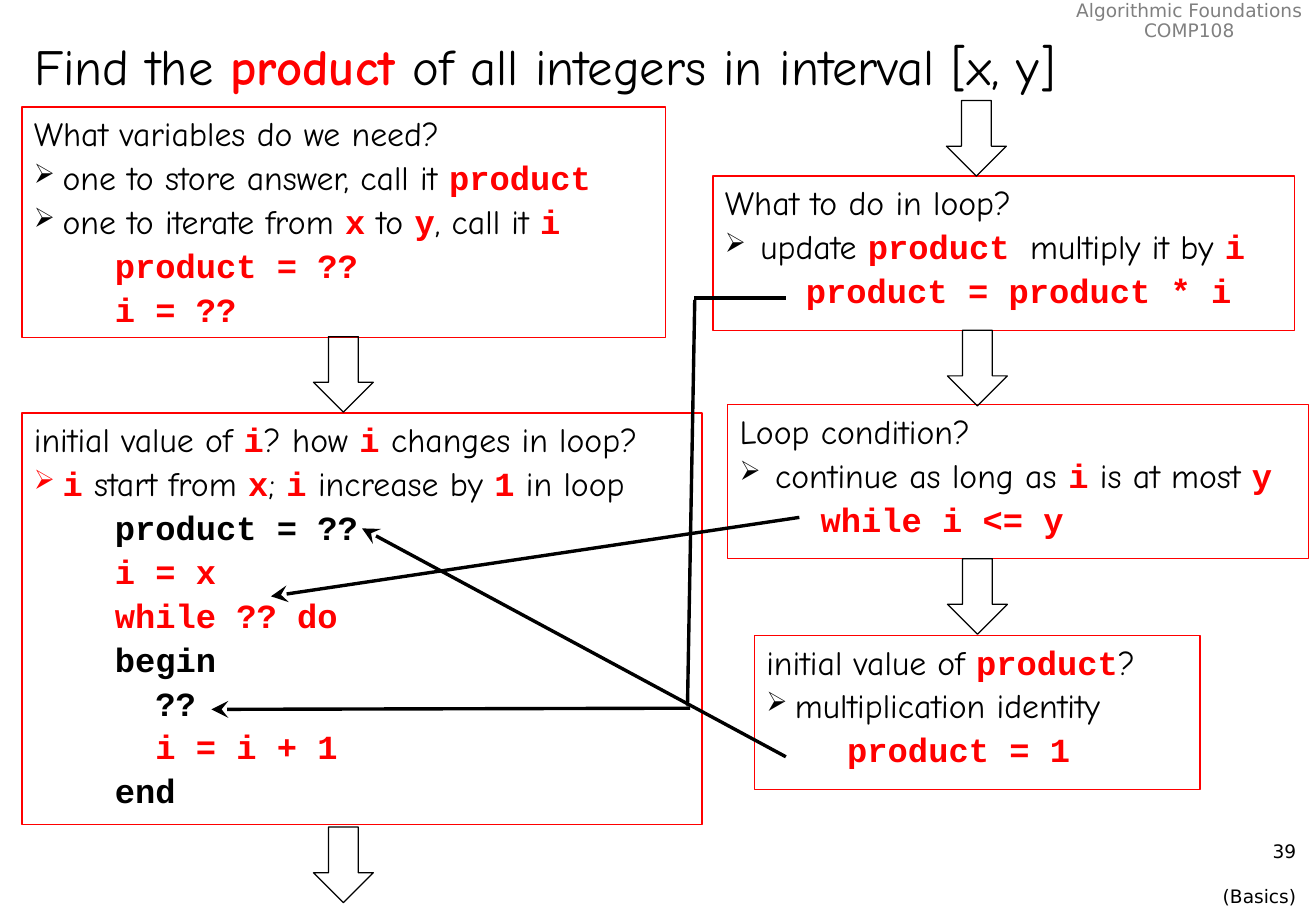
"""Build the slide on deriving a loop that multiplies all integers in an interval."""
from dataclasses import dataclass

from lxml.etree import SubElement
from pptx import Presentation
from pptx.dml.color import RGBColor as RGB
from pptx.enum.shapes import MSO_CONNECTOR as LINE, MSO_SHAPE as SHAPE
from pptx.enum.text import MSO_ANCHOR as ANCHOR, MSO_AUTO_SIZE as AUTO, PP_ALIGN as ALIGN
from pptx.oxml.ns import qn
from pptx.util import Pt


@dataclass(frozen=True)
class Theme:
    black: RGB = RGB(0, 0, 0)
    red: RGB = RGB(255, 0, 0)
    gray: RGB = RGB(128, 128, 128)
    hand: str = "Comic Neue"
    mono: str = "Courier New"
    sans: str = "DejaVu Sans"
    title: int = 30
    body: int = 20
    small: int = 11
    outline: float = 0.75
    link: int = 2


T = Theme()
STYLES = {
    "say": (T.hand, T.body, T.black, False),
    "code": (T.mono, T.body, T.red, True),
    "kept": (T.mono, T.body, T.black, True),
    "title": (T.hand, T.title, T.black, False),
    "key": (T.hand, T.title, T.red, True),
    "header": (T.sans, T.small, T.gray, False),
    "footer": (T.sans, T.small, T.black, False),
}
CODE_INDENT = 48
NEST_INDENT = 72

TITLE = [("title", "Find the "), ("key", "product"),
         ("title", " of all integers in interval [x, y]")]
HEADER = ["Algorithmic Foundations", "COMP108"]
FOOTER = ["39", "(Basics)"]

BOXES = [
    ((13, 63.4, 381.6, 136.8), 17, [
        ("head", [("say", "What variables do we need?")]),
        ("bullet", [("say", "one to store answer, call it "), ("code", "product")]),
        ("bullet", [("say", "one to iterate from "), ("code", "x"), ("say", " to "),
                    ("code", "y"), ("say", ", call it "), ("code", "i")]),
        ("line", [("code", "product = ??")]),
        ("line", [("code", "i = ??")]),
    ]),
    ((13, 244.8, 403.2, 244), 17, [
        ("head", [("say", "initial value of "), ("code", "i"), ("say", "? how "),
                  ("code", "i"), ("say", " changes in loop?")]),
        ("bullet", [("code", "i"), ("say", " start from "), ("code", "x"), ("say", "; "),
                    ("code", "i"), ("say", " increase by "), ("code", "1"),
                    ("say", " in loop")]),
        ("line", [("kept", "product = ??")]),
        ("line", [("code", "i = x")]),
        ("line", [("code", "while ?? do")]),
        ("line", [("kept", "begin")]),
        ("nested", [("kept", "??")]),
        ("nested", [("code", "i = i + 1")]),
        ("line", [("kept", "end")]),
    ]),
    ((422.6, 104.4, 344.9, 91.4), 21, [
        ("head", [("say", "What to do in loop?")]),
        ("bullet", [("say", "update "), ("code", "product "), ("say", "multiply it by "),
                    ("code", "i")]),
        ("line", [("code", "product = product * i")]),
    ]),
    ((431.3, 239.8, 344.2, 91.4), 21, [
        ("head", [("say", "Loop condition?")]),
        ("bullet", [("say", "continue as long as "), ("code", "i"),
                    ("say", " is at most "), ("code", "y")]),
        ("line", [("code", "while i <= y")]),
    ]),
    ((447.1, 376.6, 264.2, 91.4), 17, [
        ("head", [("say", "initial value of "), ("code", "product"), ("say", "?")]),
        ("bullet", [("say", "multiplication identity")]),
        ("line", [("code", "product = 1")]),
    ]),
]

ARROW_SIZE = (35.5, 44.8)
ARROWS = [(185.8, 199.6), (185.8, 490.3), (561, 59.6), (561.6, 195.8), (561.6, 331.2)]
LINKS = [
    ((465.8, 176.6), (411.1, 176.6), False),
    ((411.8, 177.8), (407.5, 418.3), False),
    ((409, 419.8), (125.3, 420.5), True),
    ((473.8, 306.7), (160.6, 353.5), True),
    ((465.8, 448.6), (214.6, 313.2), True),
]


def pts(*values):
    return [Pt(v) for v in values]


def add_runs(p, runs):
    for style, text in runs:
        r = p.add_run()
        r.text = text
        r.font.name, size, color, r.font.bold = STYLES[style]
        r.font.size = Pt(size)
        r.font.color.rgb = color


def add_paragraph(tf, index):
    return tf.add_paragraph() if index else tf.paragraphs[0]


def add_shape(s, kind, frame, color):
    sp = s.shapes.add_shape(kind, *pts(*frame))
    sp.shadow.inherit = False
    sp.fill.background()
    sp.line.color.rgb = color
    sp.line.width = Pt(T.outline)
    return sp


def add_box(s, frame, hang, lines):
    tf = add_shape(s, SHAPE.RECTANGLE, frame, T.red).text_frame
    tf.word_wrap = True
    tf.vertical_anchor = ANCHOR.TOP
    margins = {"head": 0, "bullet": hang, "line": CODE_INDENT, "nested": NEST_INDENT}
    for i, (kind, runs) in enumerate(lines):
        p = add_paragraph(tf, i)
        p.alignment = ALIGN.LEFT
        pPr = p._p.get_or_add_pPr()
        pPr.set("marL", str(Pt(margins[kind])))
        pPr.set("indent", str(Pt(-hang if kind == "bullet" else 0)))
        before = SubElement(pPr, qn("a:spcBef"))
        SubElement(before, qn("a:spcPct"), val="10000")
        if kind == "bullet":
            SubElement(pPr, qn("a:buSzPct"), val="80000")
            SubElement(pPr, qn("a:buChar"), char="➢")
        add_runs(p, runs)


def add_label(s, frame, lines, style, align, wrap, leading, gap):
    tf = s.shapes.add_textbox(*pts(*frame)).text_frame
    tf.word_wrap = wrap
    for i, text in enumerate(lines):
        p = add_paragraph(tf, i)
        p.alignment = align
        p.line_spacing = leading
        p.space_before = Pt(gap if i else 0)
        add_runs(p, [(style, text)])


def add_link(s, start, end, pointed):
    c = s.shapes.add_connector(LINE.STRAIGHT, *pts(*start, *end))
    c.line.color.rgb = T.black
    c.line.width = Pt(T.link)
    if pointed:
        SubElement(c.line._get_or_add_ln(), qn("a:tailEnd"), type="stealth", w="lg", len="lg")
    SubElement(c._element.spPr, qn("a:effectLst"))


def add_title(s):
    sp = s.shapes.title
    sp.left, sp.top, sp.width, sp.height = pts(13, 16.6, 694.8, 43.9)
    tf = sp.text_frame
    tf.word_wrap = True
    tf.auto_size = AUTO.NONE
    tf.vertical_anchor = ANCHOR.MIDDLE
    p = tf.paragraphs[0]
    p.alignment = ALIGN.LEFT
    add_runs(p, TITLE)


def main():
    prs = Presentation()
    prs.slide_width, prs.slide_height = pts(780, 540)
    s = prs.slides.add_slide(prs.slide_layouts[5])
    add_title(s)
    add_label(s, (630, -2.9, 149.8, 31), HEADER, "header", ALIGN.CENTER, False, 0.9, 0)
    add_label(s, (612.7, 494.6, 162.7, 36), FOOTER, "footer", ALIGN.RIGHT, True, 1.0, 13)
    for box in BOXES:
        add_box(s, *box)
    for spot in ARROWS:
        add_shape(s, SHAPE.DOWN_ARROW, spot + ARROW_SIZE, T.black)
    for link in LINKS:
        add_link(s, *link)
    prs.save("out.pptx")


if __name__ == "__main__":
    main()
